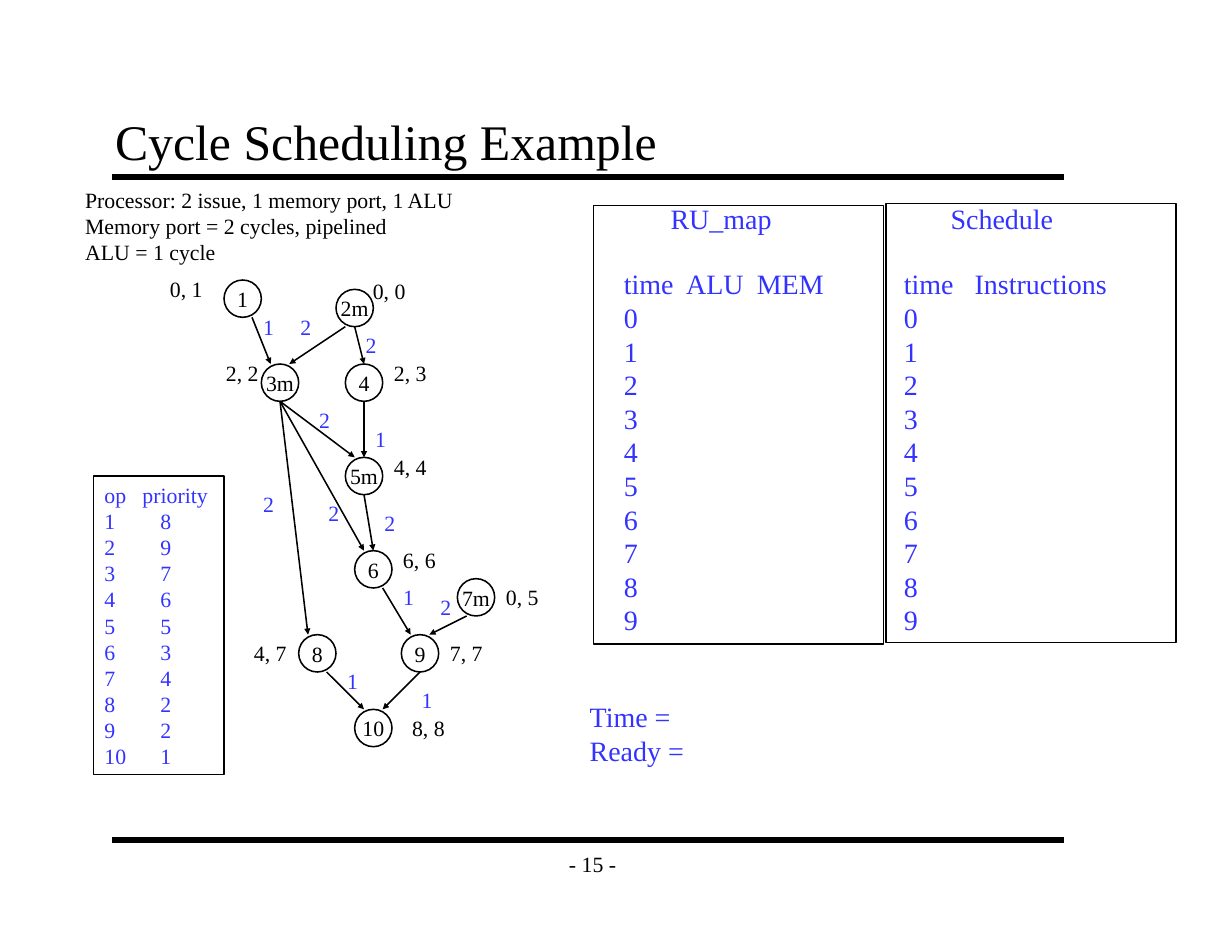
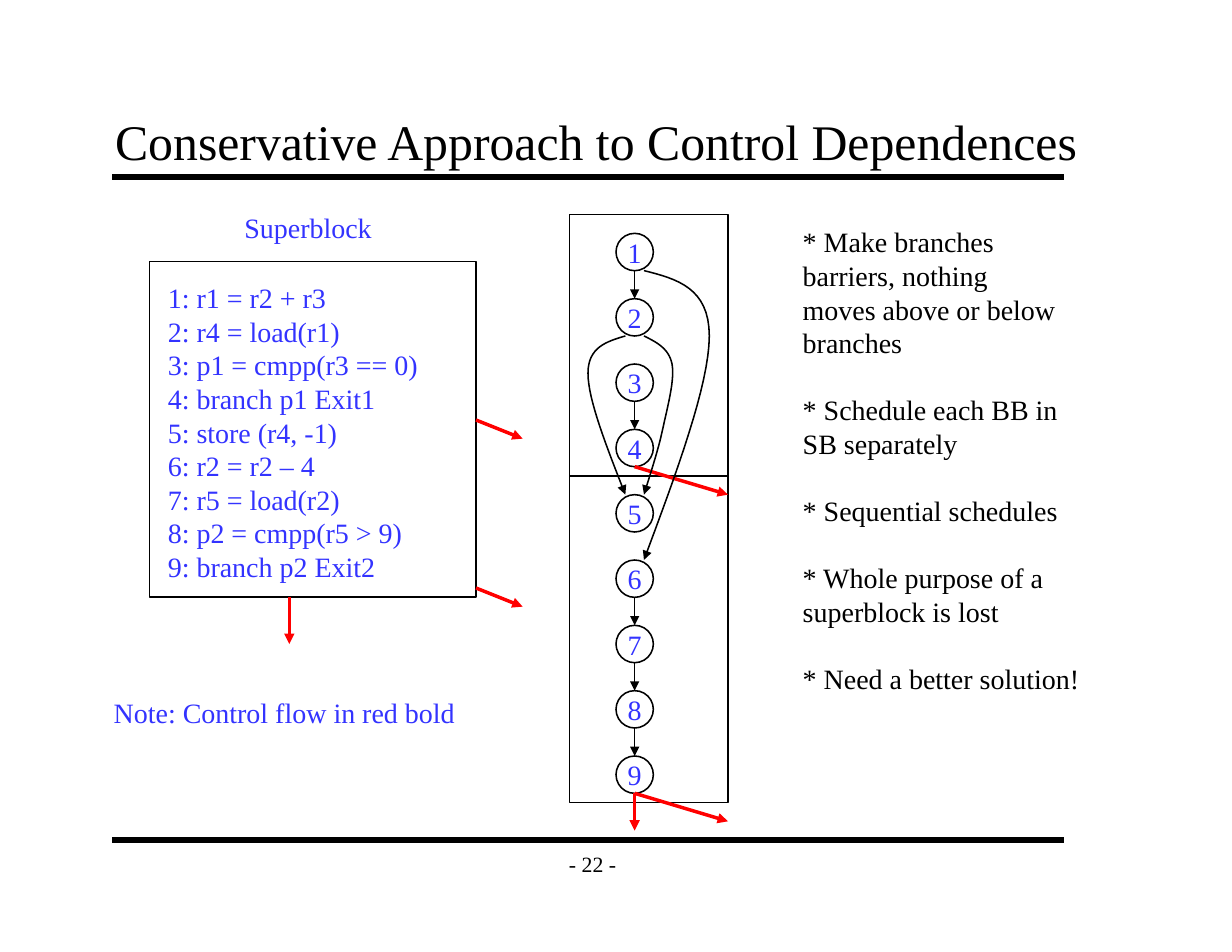
from lxml import etree
from pptx import Presentation
from pptx.dml import color
from pptx.enum import shapes, text
from pptx.oxml import ns
from pptx.util import Pt

FONT = "Times New Roman"
BLACK, BLUE, RED = "000000", "3333FF", "FF0000"
NODE = 24
rgb = color.RGBColor.from_string


def write(tf, lines, size, hue, align=text.PP_ALIGN.LEFT):
    tf.text = "\n".join(lines)
    for p in tf.paragraphs:
        p.alignment = align
        p.line_spacing = Pt(size * 1.2)
        p.font.name = FONT
        p.font.size = Pt(size)
        p.font.color.rgb = rgb(hue)
    return tf


def draw_line(sp, hue=BLACK, width=1, head=None):
    sp.line.color.rgb = rgb(hue)
    sp.line.width = Pt(width)
    sp_pr = sp._element.spPr
    if head:
        ln = sp_pr.find(ns.qn("a:ln"))
        etree.SubElement(ln, ns.qn("a:tailEnd"), type="triangle", w=head, len=head)
    etree.SubElement(sp_pr, ns.qn("a:effectLst"))


prs = Presentation()
prs.slide_width, prs.slide_height = Pt(792), Pt(612)

slides = []
for title, title_width, number in [
    ("Cycle Scheduling Example", 612, 15),
    ("Conservative Approach to Control Dependences", 654, 22),
]:
    s = prs.slides.add_slide(prs.slide_layouts[5])
    slides.append(s)
    for y in (114, 540):
        rule = s.shapes.add_connector(shapes.MSO_CONNECTOR.STRAIGHT, Pt(72), Pt(y), Pt(684), Pt(y))
        draw_line(rule, BLACK, 4)
    heading = s.shapes.title
    heading.left, heading.top, heading.width, heading.height = Pt(66), Pt(66), Pt(title_width), Pt(48)
    footer = s.shapes.add_textbox(Pt(354), Pt(540), Pt(54), Pt(30))
    for sp, anchor in ((heading, text.MSO_ANCHOR.BOTTOM), (footer, text.MSO_ANCHOR.MIDDLE)):
        tf = sp.text_frame
        tf.word_wrap = True
        tf.auto_size = text.MSO_AUTO_SIZE.NONE
        tf.vertical_anchor = anchor
        tf.margin_left = tf.margin_right = Pt(8)
        tf.margin_top = tf.margin_bottom = Pt(4.5)
    write(heading.text_frame, [title], 32, BLACK)
    write(footer.text_frame, [f"- {number} -"], 14, BLACK, text.PP_ALIGN.CENTER)

example, control = slides

for s, x, y, w, h in [
    (example, 60, 306, 84, 192),
    (example, 381.6, 132, 186.5, 282),
    (example, 569.5, 131, 186.5, 282),
    (control, 96, 168, 210, 216),
    (control, 366, 138, 102, 168),
    (control, 366, 306, 102, 210),
]:
    box = s.shapes.add_shape(shapes.MSO_SHAPE.RECTANGLE, Pt(x), Pt(y), Pt(w), Pt(h))
    box.fill.background()
    draw_line(box)

nodes = [
    (example, label, x, y, 14, BLACK)
    for label, x, y in [
        ("1", 144, 180), ("2m", 216, 186), ("3m", 168, 234), ("4", 222, 234), ("5m", 222, 294),
        ("6", 228, 354), ("7m", 294, 372), ("8", 192, 408), ("9", 258, 408), ("10", 228, 456),
    ]
]
nodes += [(control, str(i + 1), 396, 150 + 42 * i, 18, BLUE) for i in range(9)]
for s, label, x, y, size, hue in nodes:
    node = s.shapes.add_shape(shapes.MSO_SHAPE.OVAL, Pt(x), Pt(y), Pt(NODE), Pt(NODE))
    node.fill.background()
    draw_line(node)
    tf = node.text_frame
    tf.word_wrap = False
    tf.vertical_anchor = text.MSO_ANCHOR.MIDDLE
    write(tf, [label], size, hue, text.PP_ALIGN.CENTER)

arrows = [
    (example, ends, BLACK, 1, "sm")
    for ends in [
        (162, 204, 174, 234), (222, 210, 186, 234), (228, 210, 234, 234), (180, 258, 228, 294),
        (180, 258, 234, 354), (180, 258, 198, 408), (234, 258, 234, 294), (234, 318, 240, 354),
        (246, 378, 264, 408), (300, 396, 276, 408), (210, 432, 234, 456), (270, 432, 246, 456),
    ]
]
arrows += [
    (control, (408, 132 + 42 * i, 408, 150 + 42 * i), BLACK, 1, "med") for i in (1, 3, 6, 7, 8)
]
arrows += [
    (control, ends, RED, 2.25, "med")
    for ends in [
        (408, 300, 468, 318), (408, 510, 468, 528), (408, 510, 408, 534),
        (186, 384, 186, 414), (306, 270, 336, 282), (306, 378, 336, 390),
    ]
]
for s, ends, hue, width, head in arrows:
    arrow = s.shapes.add_connector(shapes.MSO_CONNECTOR.STRAIGHT, *[Pt(v) for v in ends])
    draw_line(arrow, hue, width, head)

STEPS = 16
for start, *curves in [
    [(402, 216), [(390, 219.6), (378, 223.2), (378, 240)], [(378, 257), (390, 287.3), (402, 318)]],
    [(414, 174), [(435, 179.3), (456, 185), (456, 216)], [(456, 247), (435, 303.8), (414, 360)]],
    [(414, 216), [(422, 220), (430, 224), (432, 234)], [(434, 244), (429, 262), (426, 276)],
     [(423, 290), (418.3, 303.8), (414, 318)]],
]:
    points = [start]
    for c1, c2, end in curves:
        begin = points[-1]
        for i in range(1, STEPS + 1):
            t = i / STEPS
            points.append(tuple(
                a * (1 - t) ** 3 + 3 * b * t * (1 - t) ** 2 + 3 * c * t ** 2 * (1 - t) + d * t ** 3
                for a, b, c, d in zip(begin, c1, c2, end)
            ))
    builder = control.shapes.build_freeform(Pt(start[0]), Pt(start[1]))
    builder.add_line_segments([(Pt(x), Pt(y)) for x, y in points[1:]], close=False)
    curve = builder.convert_to_shape()
    curve.fill.background()
    draw_line(curve, head="med")

latencies = [
    ("1", 162, 198), ("2", 186, 198), ("2", 228, 209.5), ("2", 198, 257.8), ("1", 234, 270),
    ("2", 162, 311.8), ("2", 204, 317.5), ("2", 240, 324), ("1", 252, 371.5), ("2", 276, 378),
    ("1", 216, 425.5), ("1", 264, 437.8),
]
start_times = [
    ("0, 1", 102.2, 173.5), ("0, 0", 232.6, 175), ("2, 2", 138.2, 227.5), ("2, 3", 246.2, 227.5),
    ("4, 4", 246.2, 288), ("6, 6", 252, 347.8), ("0, 5", 318.2, 371.5), ("4, 7", 156.2, 408),
    ("7, 7", 282.2, 407.5), ("8, 8", 257.8, 455.8),
]
cycles = [str(i) for i in range(10)]
priorities = [8, 9, 7, 6, 5, 3, 4, 2, 2, 1]
code = [
    "1: r1 = r2 + r3", "2: r4 = load(r1)", "3: p1 = cmpp(r3 == 0)", "4: branch p1 Exit1",
    "5: store (r4, -1)", "6: r2 = r2 – 4", "7: r5 = load(r2)", "8: p2 = cmpp(r5 > 9)",
    "9: branch p2 Exit2",
]
remarks = [
    "* Make branches", "barriers, nothing", "moves above or below", "branches",
    "* Schedule each BB in", "SB separately", "* Sequential schedules",
    "* Whole purpose of a", "superblock is lost", "* Need a better solution!",
]
processor = [
    "Processor: 2 issue, 1 memory port, 1 ALU", "Memory port = 2 cycles, pipelined", "ALU = 1 cycle",
]

texts = [(example, x, y, 26, 24, [label], 14, BLUE) for label, x, y in latencies]
texts += [(example, x, y, 42, 24, [label], 14, BLACK) for label, x, y in start_times]
texts += [
    (example, 47.6, 116.6, 264, 58, processor, 14, BLACK),
    (example, 60, 306, 90, 192, ["op\tpriority"] + [f"{i}\t{n}" for i, n in enumerate(priorities, 1)], 14, BLUE),
    (example, 424, 126, 90, 29, ["RU_map"], 18, BLUE),
    (example, 394, 168, 165, 245, ["time\tALU\tMEM"] + cycles, 18, BLUE),
    (example, 604, 126, 90, 29, ["Schedule"], 18, BLUE),
    (example, 574, 168, 165, 245, ["time\tInstructions"] + cycles, 18, BLUE),
    (example, 372, 446.4, 90, 51, ["Time =", "Ready ="], 18, BLUE),
    (control, 150, 132, 105, 29, ["Superblock"], 18, BLUE),
    (control, 100.8, 177, 185, 202, code, 18, BLUE),
    (control, 66, 443.5, 245, 29, ["Note: Control flow in red bold"], 18, BLUE),
    (control, 509, 141, 205, 312, remarks, 18, BLACK),
]
tab_stops = {"time\tALU\tMEM": (40, 85.5), "time\tInstructions": (45.5,), "op\tpriority": (24.5,)}

for s, x, y, w, h, lines, size, hue in texts:
    tf = s.shapes.add_textbox(Pt(x), Pt(y), Pt(w), Pt(h)).text_frame
    tf.word_wrap = True
    write(tf, lines, size, hue)
    for i, (line, p) in enumerate(zip(lines, tf.paragraphs)):
        if line.startswith("* ") and i:
            p.space_before = Pt(21.6)
        if "\t" in line:
            tabs = etree.Element(ns.qn("a:tabLst"))
            for stop in tab_stops.get(line, (36,)):
                etree.SubElement(tabs, ns.qn("a:tab"), pos=str(Pt(stop)), algn="l")
            p._p.get_or_add_pPr().insert(1, tabs)

prs.save("out.pptx")
